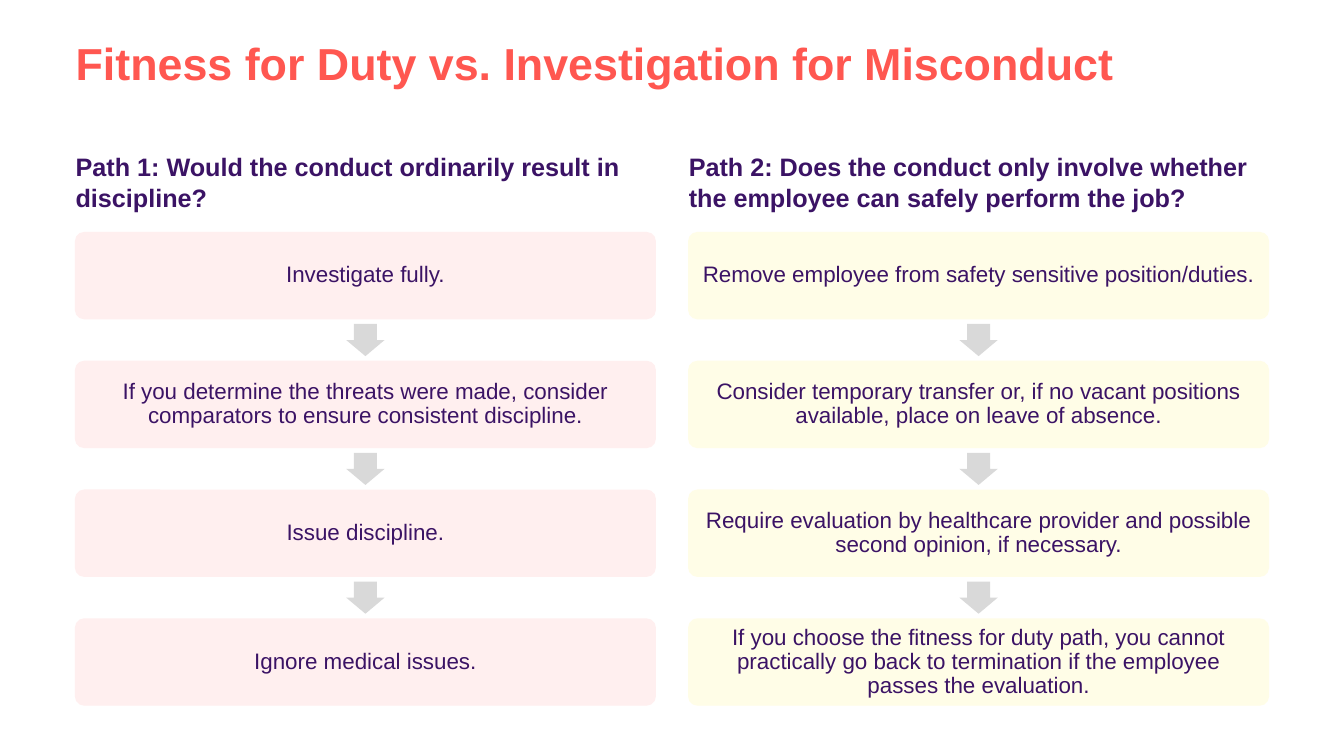
import dataclasses

import pptx
import pptx.dml.color
import pptx.enum.shapes
import pptx.enum.text
import pptx.util

Pt = pptx.util.Pt
ALIGN = pptx.enum.text.PP_ALIGN
SHAPE = pptx.enum.shapes.MSO_SHAPE


@dataclasses.dataclass(frozen=True)
class Theme:
    font: str = "Arial"
    coral: str = "FF5750"
    purple: str = "3B1365"
    pink: str = "FFEFEF"
    cream: str = "FFFDE7"
    grey: str = "D9D9D9"
    title_size: int = 32
    heading_size: int = 18
    step_size: int = 16


@dataclasses.dataclass(frozen=True)
class Box:
    left: float
    top: float
    width: float
    height: float

    def place(self):
        return [Pt(value) for value in dataclasses.astuple(self)]


THEME = Theme()
TITLE = "Fitness for Duty vs. Investigation for Misconduct"
PATHS = [
    ("Path 1: Would the conduct ordinarily result in discipline?", THEME.pink, [
        "Investigate fully.",
        "If you determine the threats were made, consider comparators to ensure consistent discipline.",
        "Issue discipline.",
        "Ignore medical issues.",
    ]),
    ("Path 2: Does the conduct only involve whether the employee can safely perform the job?", THEME.cream, [
        "Remove employee from safety sensitive position/duties.",
        "Consider temporary transfer or, if no vacant positions available, place on leave of absence.",
        "Require evaluation by healthcare provider and possible second opinion, if necessary.",
        "If you choose the fitness for duty path, you cannot practically go back to termination "
        "if the employee passes the evaluation.",
    ]),
]


def set_attributes(target, values):
    for name, value in values.items():
        setattr(target, name, value)


def write_text(shape, text, size, color, bold=False, inset=0, **para_format):
    frame = shape.text_frame
    set_attributes(frame, {
        "word_wrap": True,
        "auto_size": pptx.enum.text.MSO_AUTO_SIZE.NONE,
        "vertical_anchor": pptx.enum.text.MSO_ANCHOR.MIDDLE,
        "margin_left": Pt(inset), "margin_right": Pt(inset),
        "margin_top": Pt(inset), "margin_bottom": Pt(inset),
    })
    para = frame.paragraphs[0]
    set_attributes(para, para_format)
    span = para.add_run()
    span.text = text
    set_attributes(span.font, {"name": THEME.font, "size": Pt(size), "bold": bold})
    span.font.color.rgb = pptx.dml.color.RGBColor.from_string(color)


def fill_placeholder(holder, box, text, size, color, **para_format):
    left, top, width, height = box.place()
    set_attributes(holder, {"left": left, "top": top, "width": width, "height": height})
    write_text(holder, text, size, color, bold=True, alignment=ALIGN.LEFT, **para_format)


def add_filled(page, kind, box, color):
    shape = page.shapes.add_shape(kind, *box.place())
    shape.shadow.inherit = False
    shape.fill.solid()
    shape.fill.fore_color.rgb = pptx.dml.color.RGBColor.from_string(color)
    return shape


def add_step(page, box, text, color):
    step = add_filled(page, SHAPE.ROUNDED_RECTANGLE, box, color)
    step.adjustments[0] = 0.1
    step.line.color.rgb = pptx.dml.color.RGBColor.from_string(color)
    step.line.width = Pt(1)
    write_text(step, text, THEME.step_size, THEME.purple, inset=6.5,
               alignment=ALIGN.CENTER, line_spacing=0.9)


def add_arrow(page, center_x, center_y, length=23, breadth=27.4):
    box = Box(center_x - length / 2, center_y - breadth / 2, length, breadth)
    arrow = add_filled(page, SHAPE.RIGHT_ARROW, box, THEME.grey)
    arrow.line.fill.background()
    arrow.rotation = 90
    arrow.adjustments[0] = 0.6
    arrow.adjustments[1] = 0.5


def add_flow(page, box, steps, color, step_height=61.4):
    """Stack steps evenly over the box, with an arrow in each gap."""
    pitch = (box.height - step_height) / (len(steps) - 1)
    gap = pitch - step_height
    for index, text in enumerate(steps):
        top = box.top + index * pitch
        if index:
            add_arrow(page, box.left + box.width / 2, top - gap / 2)
        add_step(page, Box(box.left, top, box.width, step_height), text, color)


def add_path(page, box, heading_holder, path):
    heading, color, steps = path
    heading_height, flow_offset = 55.4, 64
    fill_placeholder(heading_holder, Box(box.left, box.top, box.width, heading_height),
                     heading, THEME.heading_size, THEME.purple, space_before=Pt(10))
    flow_box = Box(box.left, box.top + flow_offset, box.width, box.height - flow_offset)
    add_flow(page, flow_box, steps, color)


def build_comparison(deck, box):
    page = deck.slides.add_slide(deck.slide_layouts.get_by_name("Comparison"))
    holders = {holder.placeholder_format.idx: holder for holder in page.placeholders}

    # Title
    fill_placeholder(holders[0], Box(box.left, box.top, box.width, 85.6),
                     TITLE, THEME.title_size, THEME.coral, line_spacing=0.9)

    # The two paths, side by side
    gutter, paths_offset = 24, 98
    width = (box.width - gutter) / len(PATHS)
    for index, (heading_idx, path) in enumerate(zip((1, 3), PATHS)):
        column = Box(box.left + index * (width + gutter), box.top + paths_offset,
                     width, box.height - paths_offset)
        add_path(page, column, holders[heading_idx], path)

    # Content placeholders give way to the flows
    for idx in (2, 4):
        element = holders[idx].element
        element.getparent().remove(element)


def main():
    deck = pptx.Presentation()
    set_attributes(deck, {"slide_width": Pt(960), "slide_height": Pt(540)})
    build_comparison(deck, Box(54, 4.2, 852, 499.4))
    deck.save("out.pptx")


if __name__ == "__main__":
    main()
